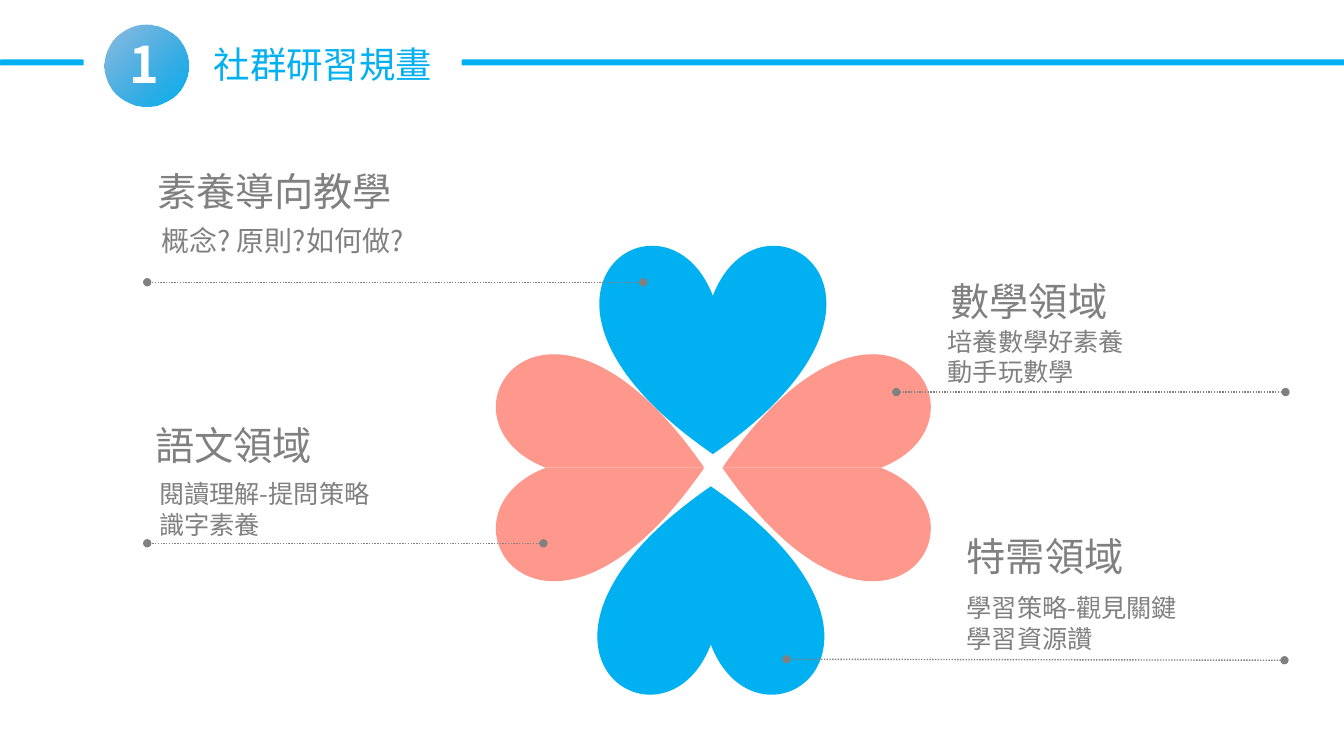
"""Build a slide with a four-heart clover and its four labelled topics."""
from dataclasses import dataclass

import lxml.etree
import pptx
import pptx.dml.color
import pptx.enum.dml
import pptx.enum.shapes
import pptx.enum.text
import pptx.oxml.ns
import pptx.util

Inches = pptx.util.Inches
Box = tuple[float, float, float, float]
FACE = "Noto Sans CJK SC"
HUES = {"blue": "00B0F0", "deep": "0070C0", "pink": "FE978C",
        "gray": "808080", "white": "FFFFFF"}
WIDE, HIGH = 112, 207
CURVES = [[(0, 100), (0, 150), (0, 207)], [(228, 50), (47, -72), (0, 50)]]


@dataclass
class Heart:
    """A heart by its centre, its clockwise turn and its hue."""
    x: float
    y: float
    turn: int
    hue: str


@dataclass
class Topic:
    """A heading, its details and the dotted rule below them."""
    head: str
    spot: Box
    lines: list[str]
    area: Box
    size: int
    rule: Box


HEARTS = [
    Heart(7.07, 3.47, 0, "blue"),
    Heart(8.2, 4.64, 90, "pink"),
    Heart(7.05, 5.86, 180, "blue"),
    Heart(5.95, 4.64, 270, "pink"),
]
TOPICS = [
    Topic("素養導向教學", (1.46, 1.61, 2.82, 0.57), ["概念? 原則?如何做?"],
          (1.5, 2.17, 2.78, 0.44), 20, (6.38, 2.8, 1.46, 2.8)),
    Topic("數學領域", (9.33, 2.7, 2.21, 0.57), ["培養數學好素養", "動手玩數學"],
          (9.3, 3.19, 2.21, 0.71), 18, (12.75, 3.89, 8.89, 3.89)),
    Topic("特需領域", (9.49, 5.23, 2.21, 0.57), ["學習策略-觀見關鍵", "學習資源讚"],
          (9.49, 5.83, 2.42, 0.71), 18, (12.74, 6.55, 7.8, 6.54)),
    Topic("語文領域", (1.44, 4.13, 2.21, 0.57), ["閱讀理解-提問策略", "識字素養"],
          (1.48, 4.7, 2.42, 0.71), 18, (5.39, 5.39, 1.46, 5.39)),
]
BARS = [(4.58, 0.59, 8.76, 0.06), (0, 0.59, 0.83, 0.06)]


def tint(name: str) -> pptx.dml.color.RGBColor:
    """Look up a hue."""
    return pptx.dml.color.RGBColor.from_string(HUES[name])


def add_node(root, tag: str, **attrs: str):
    """Append a drawing element to an XML node."""
    return lxml.etree.SubElement(root, pptx.oxml.ns.qn(tag), attrs)


def write(frame, lines: list[str], size: int, hue: str, bold: bool = False,
          align=pptx.enum.text.PP_ALIGN.LEFT) -> None:
    """Fill a text frame with one styled paragraph per line."""
    style = {"size": pptx.util.Pt(size), "bold": bold, "name": FACE}
    for i, line in enumerate(lines):
        para = frame.paragraphs[0] if i == 0 else frame.add_paragraph()
        para.alignment = align
        run = para.add_run()
        run.text = line
        run.font.color.rgb = tint(hue)
        for key, value in style.items():
            setattr(run.font, key, value)
        add_node(run.font._element, "a:ea", typeface=FACE)


def paint(shape, hue: str) -> None:
    """Give a shape a flat fill without line or shadow."""
    shape.shadow.inherit = False
    shape.line.fill.background()
    shape.fill.solid()
    shape.fill.fore_color.rgb = tint(hue)


def add_frame(slide, box: Box):
    """Add a wrapped text box and return its text frame."""
    frame = slide.shapes.add_textbox(*map(Inches, box)).text_frame
    frame.word_wrap = True
    return frame


def add_half(slide, heart: Heart, side: int):
    """Draw the left (-1) or right (1) half of an upright heart."""
    pen = slide.shapes.build_freeform(0, 0, scale=float(Inches(0.01)))
    pen.add_line_segments([(WIDE, 0), (WIDE, HIGH), (0, HIGH)])
    left = heart.x - (WIDE / 100 if side < 0 else 0)
    half = pen.convert_to_shape(Inches(left), Inches(heart.y - HIGH / 200))
    paint(half, heart.hue)
    trace = half._element.spPr.find(".//" + pptx.oxml.ns.qn("a:path"))
    for node in list(trace):
        trace.remove(node)
    steps = [("a:moveTo", CURVES[-1][-1:])]
    steps += [("a:cubicBezTo", curve) for curve in CURVES]
    for tag, dots in steps:
        step = add_node(trace, tag)
        for x, y in dots:
            add_node(step, "a:pt", x=str(x if side > 0 else WIDE - x), y=str(y))
    add_node(trace, "a:close")
    return half


def add_heart(slide, heart: Heart) -> None:
    """Group the two halves of a heart and turn them."""
    halves = [add_half(slide, heart, side) for side in (-1, 1)]
    slide.shapes.add_group_shape(halves).rotation = heart.turn


def add_rule(slide, ends: Box) -> None:
    """Draw a dotted line with a round dot at each end."""
    kind = pptx.enum.shapes.MSO_CONNECTOR.STRAIGHT
    rule = slide.shapes.add_connector(kind, *map(Inches, ends))
    rule.line.color.rgb = tint("gray")
    rule.line.width = pptx.util.Pt(1)
    rule.line.dash_style = pptx.enum.dml.MSO_LINE.ROUND_DOT
    for tag in ("a:headEnd", "a:tailEnd"):
        add_node(rule.line._get_or_add_ln(), tag, type="oval")
    add_node(rule._element.spPr, "a:effectLst")


def add_badge(slide) -> None:
    """Draw the shaded circle and the section number."""
    kind = pptx.enum.shapes.MSO_SHAPE.OVAL
    badge = slide.shapes.add_shape(kind, *map(Inches, (1.04, 0.24, 0.83, 0.82)))
    paint(badge, "blue")
    badge.fill.gradient()
    badge.fill.gradient_angle = 315
    for stop, hue, place in zip(badge.fill.gradient_stops, ("deep", "blue"), (0, 1)):
        stop.color.rgb = tint(hue)
        stop.position = place
    first = badge._element.spPr.find(".//" + pptx.oxml.ns.qn("a:srgbClr"))
    add_node(first, "a:alpha", val="44000")
    frame = add_frame(slide, (0.78, 0.28, 1.31, 0.71))
    write(frame, ["1"], 36, "white", True, pptx.enum.text.PP_ALIGN.CENTER)
    frame.paragraphs[0].runs[0].font._element.set("spc", "-300")


def add_title(slide) -> None:
    """Place and format the slide title."""
    title = slide.shapes.title
    sides = ("left", "top", "width", "height")
    for key, value in zip(sides, (2.02, 0.37, 2.39, 0.54)):
        setattr(title, key, Inches(value))
    form = {"word_wrap": False, "auto_size": pptx.enum.text.MSO_AUTO_SIZE.NONE,
            "vertical_anchor": pptx.enum.text.MSO_ANCHOR.TOP}
    for key, value in form.items():
        setattr(title.text_frame, key, value)
    write(title.text_frame, ["社群研習規畫"], 26, "blue")


def main() -> None:
    """Build and save the deck."""
    deck = pptx.Presentation()
    deck.slide_width, deck.slide_height = Inches(13.33), Inches(7.5)
    slide = deck.slides.add_slide(deck.slide_layouts[5])
    add_title(slide)
    for bar in BARS:
        kind = pptx.enum.shapes.MSO_SHAPE.ROUNDED_RECTANGLE
        paint(slide.shapes.add_shape(kind, *map(Inches, bar)), "blue")
    add_badge(slide)
    for heart in HEARTS:
        add_heart(slide, heart)
    for topic in TOPICS:
        write(add_frame(slide, topic.area), topic.lines, topic.size, "gray")
        write(add_frame(slide, topic.spot), [topic.head], 28, "gray")
        add_rule(slide, topic.rule)
    deck.save("out.pptx")


if __name__ == "__main__":
    main()
